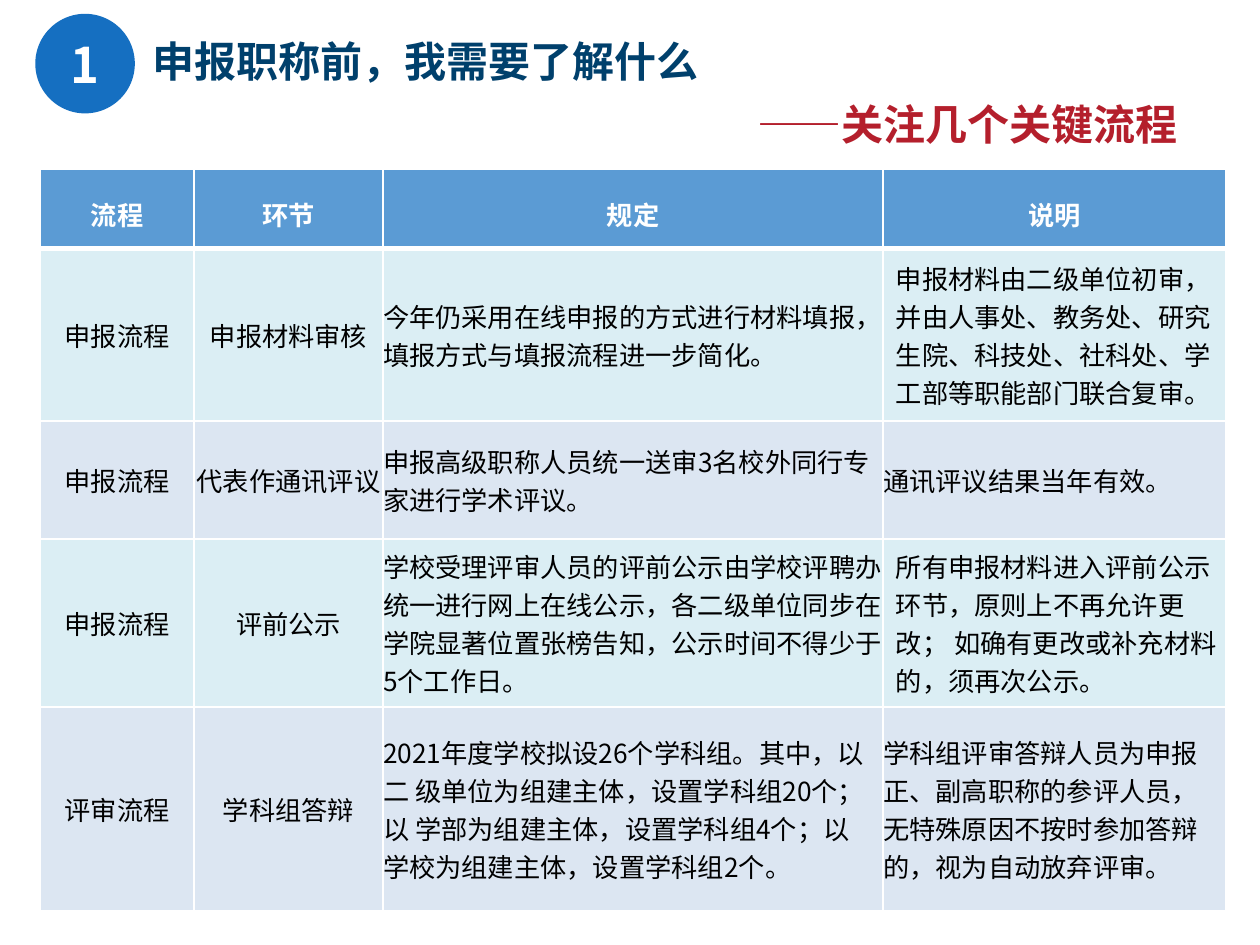
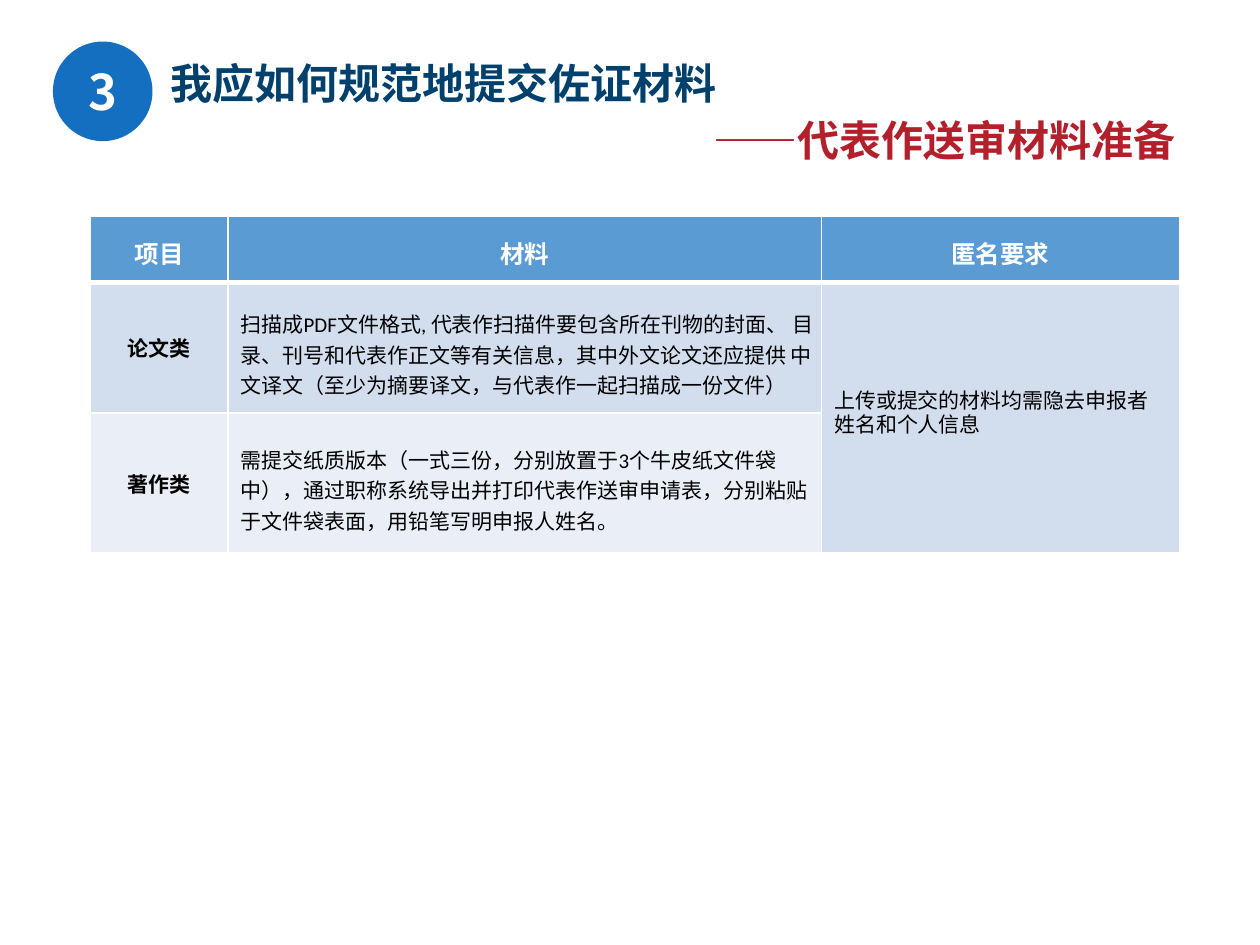
from dataclasses import dataclass

from lxml.etree import SubElement
from pptx import Presentation
from pptx.dml.color import RGBColor
from pptx.enum.shapes import MSO_SHAPE
from pptx.enum.text import MSO_ANCHOR, MSO_AUTO_SIZE, PP_ALIGN
from pptx.oxml.ns import qn
from pptx.slide import Slide
from pptx.table import _Cell
from pptx.text.text import TextFrame, _Paragraph
from pptx.util import Inches, Pt


@dataclass(frozen=True)
class Theme:
    badge: str = "156FC1"
    title: str = "00406C"
    subtitle: str = "B41F2C"
    header: str = "5B9BD4"
    white: str = "FFFFFF"
    text: str = "000000"
    body_font: str = "Noto Sans CJK SC"
    head_font: str = "Noto Sans CJK TC"
    latin_font: str = "Calibri"
    badge_size: float = 28
    title_size: float = 24
    rule: float = 1
    header_rule: float = 3


THEME = Theme()


@dataclass(frozen=True)
class Font:
    size: float
    color: str
    bold: bool = False
    name: str = THEME.body_font
    latin: str = ""


@dataclass(frozen=True)
class Heading:
    number: str
    title: str
    subtitle: str
    badge_at: tuple[float, float]
    title_at: tuple[float, float]
    subtitle_at: tuple[float, float]


@dataclass(frozen=True)
class Cell:
    text: str
    align: PP_ALIGN = PP_ALIGN.LEFT
    bold: bool = False
    indent: float = 0
    right: float = 0
    top: float = 0
    bottom: float = 0
    rows: int = 1
    line: float = 0


@dataclass(frozen=True)
class Grid:
    left: float
    top: float
    widths: list[float]
    heights: list[float]
    header: list[str]
    header_size: float
    header_drop: float
    size: float
    latin: str
    bands: tuple[str, str]
    rows: list[list[Cell]]


def centred(text: str, bold: bool = False) -> Cell:
    return Cell(text, PP_ALIGN.CENTER, bold)


def style(p: _Paragraph, font: Font) -> None:
    """Set Latin and East Asian fonts, and keep punctuation inside the margins."""
    f = p.font
    f.size, f.bold = Pt(font.size), font.bold
    f.color.rgb = RGBColor.from_string(font.color)
    f.name = font.latin or font.name
    pPr = p._p.pPr
    pPr.set("hangingPunct", "0")
    SubElement(pPr.find(qn("a:defRPr")), qn("a:ea")).set("typeface", font.name)


def write(tf: TextFrame, text: str, font: Font, align: PP_ALIGN = PP_ALIGN.LEFT) -> None:
    """Fill a middle-anchored frame without margins."""
    tf.word_wrap = True
    tf.auto_size = MSO_AUTO_SIZE.NONE
    tf.vertical_anchor = MSO_ANCHOR.MIDDLE
    tf.margin_left = tf.margin_right = tf.margin_top = tf.margin_bottom = 0
    tf.text = text
    for p in tf.paragraphs:
        p.alignment = align
        style(p, font)


def add_heading(s: Slide, h: Heading) -> None:
    x, y = map(Inches, h.badge_at)
    badge = s.shapes.add_shape(MSO_SHAPE.OVAL, x, y, Inches(0.79), Inches(0.79))
    badge.shadow.inherit = False
    badge.fill.solid()
    badge.fill.fore_color.rgb = RGBColor.from_string(THEME.badge)
    badge.line.fill.background()
    write(badge.text_frame, h.number, Font(THEME.badge_size, THEME.white, True),
          PP_ALIGN.CENTER)

    title = s.shapes.title
    title.left, title.top = map(Inches, h.title_at)
    title.width, title.height = Inches(5), Inches(0.5)
    write(title.text_frame, h.title, Font(THEME.title_size, THEME.title, True))

    x, y = map(Inches, h.subtitle_at)
    sp = s.shapes.add_textbox(x, y, Inches(3.8), Inches(0.5))
    write(sp.text_frame, h.subtitle, Font(THEME.title_size, THEME.subtitle, True))


def add_borders(cell: _Cell, top: float, bottom: float) -> None:
    tcPr = cell._tc.get_or_add_tcPr()
    sides = {"L": THEME.rule, "R": THEME.rule, "T": top, "B": bottom}
    for side, width in sides.items():
        ln = SubElement(tcPr, qn(f"a:ln{side}"))
        ln.set("w", str(Pt(width)))
        fill = SubElement(ln, qn("a:solidFill"))
        SubElement(fill, qn("a:srgbClr")).set("val", THEME.white)


def fill_cell(cell: _Cell, content: Cell, font: Font) -> None:
    cell.vertical_anchor = MSO_ANCHOR.MIDDLE
    cell.margin_left, cell.margin_right = Inches(content.indent), Inches(content.right)
    cell.margin_top, cell.margin_bottom = Inches(content.top), Inches(content.bottom)
    cell.text_frame.text = content.text
    for p in cell.text_frame.paragraphs:
        p.alignment = content.align
        if content.line:
            p.line_spacing = Pt(content.line)
        style(p, font)


def add_grid(s: Slide, g: Grid) -> None:
    frame = s.shapes.add_table(len(g.heights), len(g.widths), Inches(g.left), Inches(g.top),
                               Inches(sum(g.widths)), Inches(sum(g.heights)))
    table = frame.table
    table.horz_banding = False
    for column, width in zip(table.columns, g.widths):
        column.width = Inches(width)
    for row, height in zip(table.rows, g.heights):
        row.height = Inches(height)

    for i in range(len(g.heights)):
        for j in range(len(g.widths)):
            cell = table.cell(i, j)
            add_borders(cell, THEME.header_rule if i == 1 else THEME.rule,
                        THEME.header_rule if i == 0 else THEME.rule)
            cell.fill.solid()
            color = g.bands[(i - 1) % 2] if i else THEME.header
            cell.fill.fore_color.rgb = RGBColor.from_string(color)

    head_font = Font(g.header_size, THEME.white, True, THEME.head_font)
    for j, text in enumerate(g.header):
        fill_cell(table.cell(0, j), Cell(text, PP_ALIGN.CENTER, top=g.header_drop), head_font)
    for i, row in enumerate(g.rows, 1):
        for j, content in enumerate(row):
            if content.rows > 1:
                table.cell(i, j).merge(table.cell(i + content.rows - 1, j))
            name = THEME.head_font if content.bold else THEME.body_font
            fill_cell(table.cell(i, j), content,
                      Font(g.size, THEME.text, content.bold, name, g.latin))


PROCESS_HEADING = Heading("1", "申报职称前，我需要了解什么", "——关注几个关键流程",
                          (0.28, 0.11), (1.21, 0.23), (6.01, 0.73))

PROCESS_GRID = Grid(
    left=0.32, top=1.34,
    widths=[1.22, 1.5, 3.97, 2.72], heights=[0.63, 1.37, 0.94, 1.33, 1.62],
    header=["流程", "环节", "规定", "说明"], header_size=15, header_drop=0.09,
    size=15, latin="", bands=("DBEEF4", "DCE6F2"),
    rows=[
        [centred("申报流程"), centred("申报材料审核"),
         Cell("今年仍采用在线申报的方式进行材料填报， 填报方式与填报流程进一步简化。"),
         Cell("申报材料由二级单位初审，并由人事处、教务处、研究生院、科技处、社科处、"
              "学工部等职能部门联合复审。", indent=0.1)],
        [centred("申报流程"), centred("代表作通讯评议"),
         Cell("申报高级职称人员统一送审3名校外同行专家进行学术评议。", right=0.1),
         Cell("通讯评议结果当年有效。")],
        [centred("申报流程"), centred("评前公示"),
         Cell("学校受理评审人员的评前公示由学校评聘办统一进行网上在线公示，"
              "各二级单位同步在学院显著位置张榜告知，公示时间不得少于5个工作日。"),
         Cell("所有申报材料进入评前公示 环节，原则上不再允许更改； "
              "如确有更改或补充材料的，须再次公示。", indent=0.1)],
        [centred("评审流程"), centred("学科组答辩"),
         Cell("2021年度学校拟设26个学科组。其中，以二 级单位为组建主体，设置学科组20个；"
              "以 学部为组建主体，设置学科组4个；以学校为组建主体，设置学科组2个。",
              right=0.1),
         Cell("学科组评审答辩人员为申报 正、副高职称的参评人员， "
              "无特殊原因不按时参加答辩 的，视为自动放弃评审。")],
    ],
)

MATERIAL_HEADING = Heading("3", "我应如何规范地提交佐证材料", "——代表作送审材料准备",
                           (0.42, 0.33), (1.35, 0.41), (5.66, 0.86))

MATERIAL_GRID = Grid(
    left=0.72, top=1.72,
    widths=[1.09, 4.71, 2.84], heights=[0.52, 1.04, 1.11],
    header=["项目", "材料", "匿名要求"], header_size=14, header_drop=0.05,
    size=12, latin=THEME.latin_font, bands=("D2DEEE", "EAEEF7"),
    rows=[
        [centred("论文类", bold=True),
         Cell("扫描成PDF文件格式, 代表作扫描件要包含所在刊物的封面、 "
              "目录、刊号和代表作正文等有关信息，其中外文论文还应提供 "
              "中文译文（至少为摘要译文，与代表作一起扫描成一份文件）", indent=0.1, top=0.1),
         Cell("上传或提交的材料均需隐去申报者\n姓名和个人信息",
              indent=0.1, bottom=0.05, rows=2, line=14)],
        [centred("著作类", bold=True),
         Cell("需提交纸质版本（一式三份，分别放置于3个牛皮纸文件袋 "
              "中），通过职称系统导出并打印代表作送审申请表，分别粘贴 "
              "于文件袋表面，用铅笔写明申报人姓名。", indent=0.1, top=0.1)],
    ],
)


def main() -> None:
    prs = Presentation()
    prs.slide_width, prs.slide_height = Inches(10), Inches(7.5)
    title_only = prs.slide_layouts[5]
    for heading, grid in ((PROCESS_HEADING, PROCESS_GRID), (MATERIAL_HEADING, MATERIAL_GRID)):
        s = prs.slides.add_slide(title_only)
        add_heading(s, heading)
        add_grid(s, grid)
    prs.save("out.pptx")


if __name__ == "__main__":
    main()
